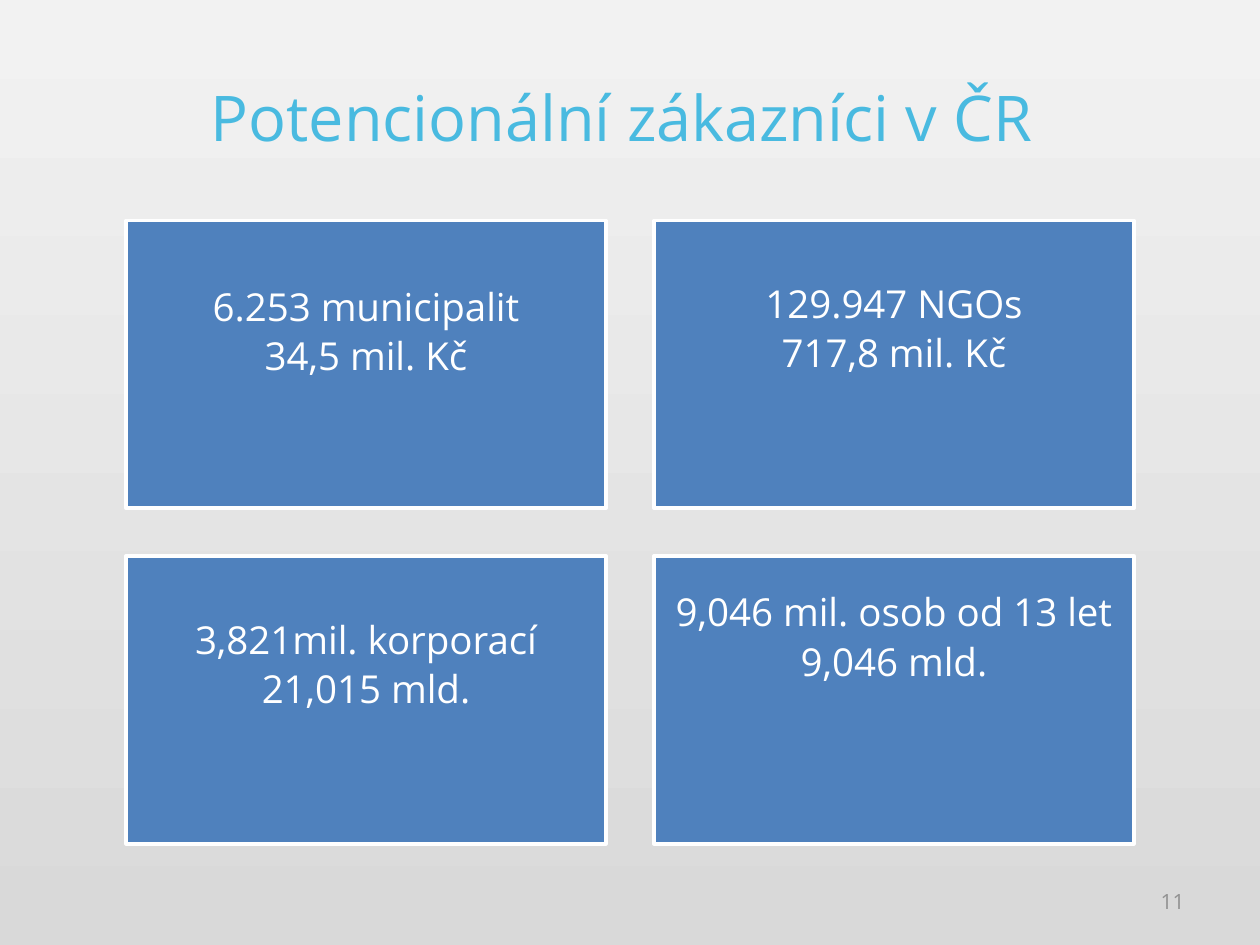
from dataclasses import dataclass

from pptx import Presentation
from pptx.dml.color import RGBColor
from pptx.enum.shapes import MSO_SHAPE as Shape
from pptx.enum.text import MSO_ANCHOR as Anchor, PP_ALIGN as Align
from pptx.util import Pt


@dataclass(frozen=True)
class Theme:
    font: str = "Open Sans"
    title_color: str = "49BAE0"
    card_fill: str = "4F81BD"
    white: str = "FFFFFF"
    number_color: str = "929292"
    background_top: str = "F2F2F2"
    background_bottom: str = "D9D9D9"
    title_size: int = 36
    card_size: int = 22
    number_size: int = 12


THEME = Theme()

CARD_LEFT, CARD_TOP = 72, 126
CARD_WIDTH, CARD_HEIGHT = 274.3, 164.4
CARD_GAP = 27.4
CARD_INSET = 6.5

# Each card: its lines and the space above them
CARDS = [
    (("6.253 municipalit", "34,5 mil. Kč"), 38.5),
    (("129.947 NGOs", "717,8 mil. Kč"), 37),
    (("3,821mil. korporací", "21,015 mld."), 37),
    (("9,046 mil. osob od 13 let", "9,046 mld."), 21.5),
]


def add_run(paragraph, text, size, color, align):
    paragraph.alignment = align
    run = paragraph.add_run()
    run.text = text
    run.font.name = THEME.font
    run.font.size = Pt(size)
    run.font.color.rgb = RGBColor.from_string(color)


def set_background(slide):
    fill = slide.background.fill
    fill.gradient()
    fill.gradient_angle = 270
    colors = (THEME.background_top, THEME.background_bottom)
    for stop, color in zip(fill.gradient_stops, colors):
        stop.color.rgb = RGBColor.from_string(color)


def set_title(slide, text):
    title = slide.shapes.title
    title.left, title.top = Pt(36), Pt(21.6)
    title.width, title.height = Pt(648), Pt(90)
    frame = title.text_frame
    frame.vertical_anchor = Anchor.MIDDLE
    add_run(frame.paragraphs[0], text, THEME.title_size, THEME.title_color, Align.CENTER)


def add_card(slide, left, top, lines, space_above):
    card = slide.shapes.add_shape(
        Shape.RECTANGLE, Pt(left), Pt(top), Pt(CARD_WIDTH), Pt(CARD_HEIGHT)
    )
    card.shadow.inherit = False
    card.fill.solid()
    card.fill.fore_color.rgb = RGBColor.from_string(THEME.card_fill)
    card.line.color.rgb = RGBColor.from_string(THEME.white)
    card.line.width = Pt(2)

    frame = card.text_frame
    frame.word_wrap = True
    frame.vertical_anchor = Anchor.TOP
    frame.margin_left = frame.margin_right = frame.margin_bottom = Pt(CARD_INSET)
    frame.margin_top = Pt(space_above)
    for index, line in enumerate(lines):
        paragraph = frame.add_paragraph() if index else frame.paragraphs[0]
        paragraph.line_spacing = 0.9
        paragraph.space_after = Pt(4.4)
        add_run(paragraph, line, THEME.card_size, THEME.white, Align.CENTER)


def add_slide_number(slide, text):
    box = slide.shapes.add_textbox(Pt(516), Pt(500.5), Pt(168), Pt(28.8))
    frame = box.text_frame
    frame.word_wrap = True
    frame.vertical_anchor = Anchor.MIDDLE
    add_run(frame.paragraphs[0], text, THEME.number_size, THEME.number_color, Align.RIGHT)


def main():
    presentation = Presentation()
    presentation.slide_width, presentation.slide_height = Pt(720), Pt(540)
    slide = presentation.slides.add_slide(presentation.slide_layouts[5])

    set_background(slide)
    set_title(slide, "Potencionální zákazníci v ČR ")
    for index, (lines, space_above) in enumerate(CARDS):
        row, column = divmod(index, 2)
        left = CARD_LEFT + column * (CARD_WIDTH + CARD_GAP)
        top = CARD_TOP + row * (CARD_HEIGHT + CARD_GAP)
        add_card(slide, left, top, lines, space_above)
    add_slide_number(slide, "11")

    presentation.save("out.pptx")


if __name__ == "__main__":
    main()
